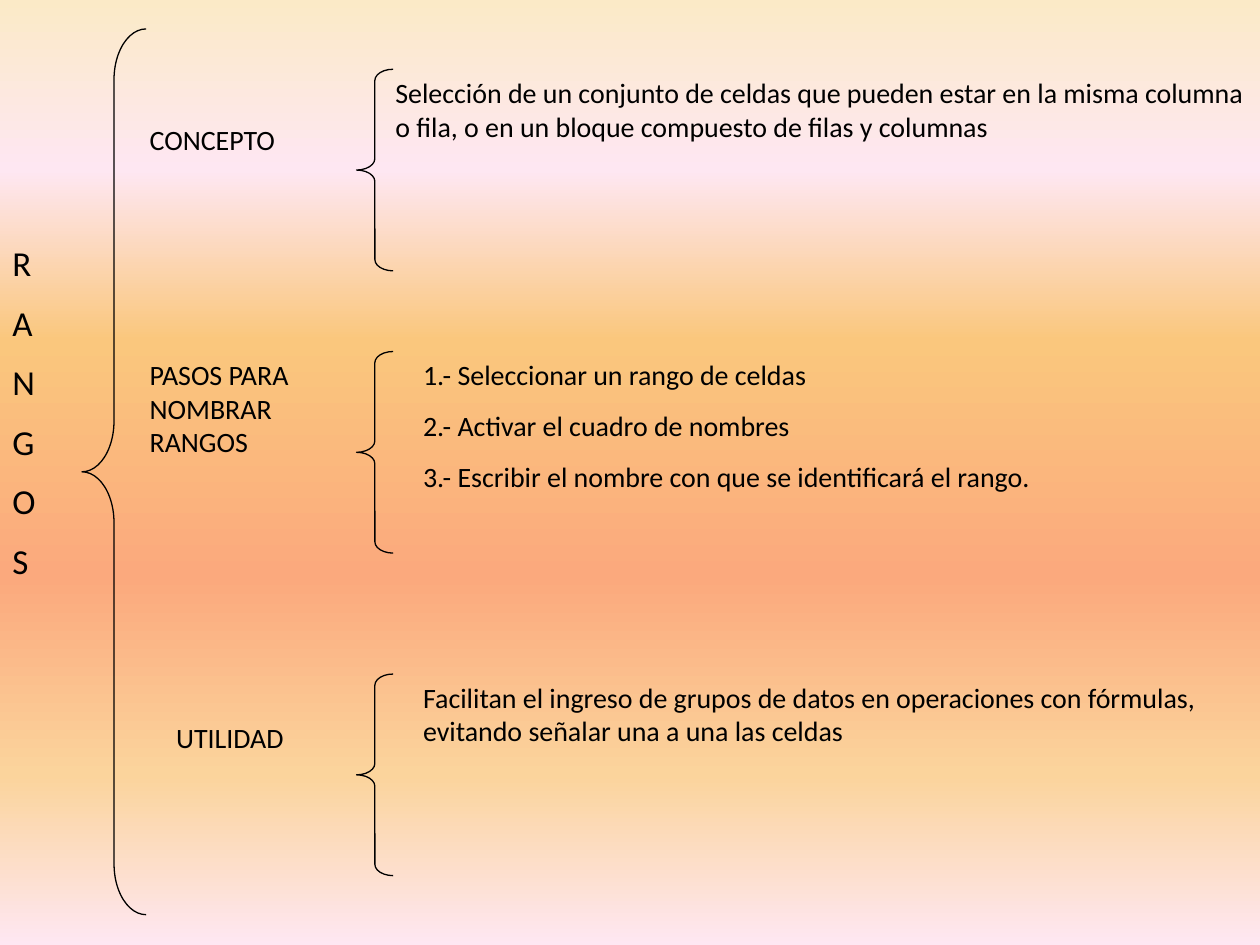
from lxml import etree
from pptx import Presentation
from pptx.dml.color import RGBColor
from pptx.enum import shapes, text
from pptx.oxml.ns import qn
from pptx.util import Inches, Pt

BLACK = RGBColor(0x00, 0x00, 0x00)
CREAM = RGBColor(0xFB, 0xEA, 0xC7)
PINK = RGBColor(0xFE, 0xE7, 0xF2)
GOLD = RGBColor(0xFA, 0xC7, 0x7D)
SALMON = RGBColor(0xFB, 0xA9, 0x7D)
SAND = RGBColor(0xFB, 0xD4, 0x9C)

# Gradient stops: percent from the top, colour
SUNSET = [(0, CREAM), (18, PINK), (36, GOLD), (61, SALMON), (82, SAND), (100, PINK)]

FONT = "Calibri"
TITLE = "RANGOS"
BRACE_LEFT, BRACE_WIDTH, BRACE_HEIGHT = 2.83, 0.29, 1.6

# Brace top, label with its box, details with their box left and height
BRANCHES = [
    (0.55, "CONCEPTO", (1.09, 0.92, 1.74, 0.64),
     ["Selección de un conjunto de celdas que pueden estar en la misma columna "
      "o fila, o en un bloque compuesto de filas y columnas"], 3.04, 1.6),
    (2.79, "PASOS PARA NOMBRAR RANGOS", (1.09, 2.79, 1.74, 1.92),
     ["1.- Seleccionar un rango de celdas",
      "2.- Activar el cuadro de nombres",
      "3.- Escribir el nombre con que se identificará el rango."], 3.26, 1.92),
    (5.35, "UTILIDAD", (1.3, 5.67, 1.52, 0.64),
     ["Facilitan el ingreso de grupos de datos en operaciones con fórmulas, "
      "evitando señalar una a una las celdas"], 3.26, 1.6),
]


def paint_background(page, stops):
    fill = page.background.fill
    fill.gradient()
    fill.gradient_angle = 270  # counter-clockwise, so top to bottom
    stop_list = next(page.element.iter(qn("a:gsLst")))
    for stop in list(stop_list):
        stop_list.remove(stop)
    for percent, color in stops:
        stop = etree.SubElement(stop_list, qn("a:gs"), pos=str(percent * 1000))
        etree.SubElement(stop, qn("a:srgbClr"), val=str(color))


def add_text(page, lines, left, top, width, height, size=16):
    box = page.shapes.add_textbox(Inches(left), Inches(top), Inches(width), Inches(height))
    frame = box.text_frame
    frame.word_wrap = True
    frame.vertical_anchor = text.MSO_ANCHOR.TOP
    frame.text = "\n".join(lines)
    for para in frame.paragraphs:
        para.space_after = Pt(10)
        para.font.name = FONT
        para.font.size = Pt(size)
        para.font.color.rgb = BLACK


def add_brace(page, left, top, width, height, curve):
    brace = page.shapes.add_shape(shapes.MSO_SHAPE.LEFT_BRACE, Inches(left), Inches(top),
                                  Inches(width), Inches(height))
    brace.adjustments[0] = curve
    brace.adjustments[1] = 0.5
    brace.shadow.inherit = False
    brace.fill.background()
    brace.line.color.rgb = BLACK
    brace.line.width = Pt(0.75)


def main():
    deck = Presentation()
    deck.slide_width, deck.slide_height = Inches(10), Inches(7.5)
    page = deck.slides.add_slide(deck.slide_layouts[6])
    paint_background(page, SUNSET)

    # Vertical title and main brace
    add_text(page, TITLE, 0, 1.87, 0.65, 3.84, size=20)
    add_brace(page, 0.65, 0.23, 0.51, 7.03, curve=0.79)

    # Branches: label, brace, details
    for top, label, label_box, details, left, height in BRANCHES:
        add_text(page, [label], *label_box)
        add_brace(page, BRACE_LEFT, top, BRACE_WIDTH, BRACE_HEIGHT, curve=0.31)
        add_text(page, details, left, top, 10 - left, height)

    deck.save("out.pptx")


if __name__ == "__main__":
    main()
